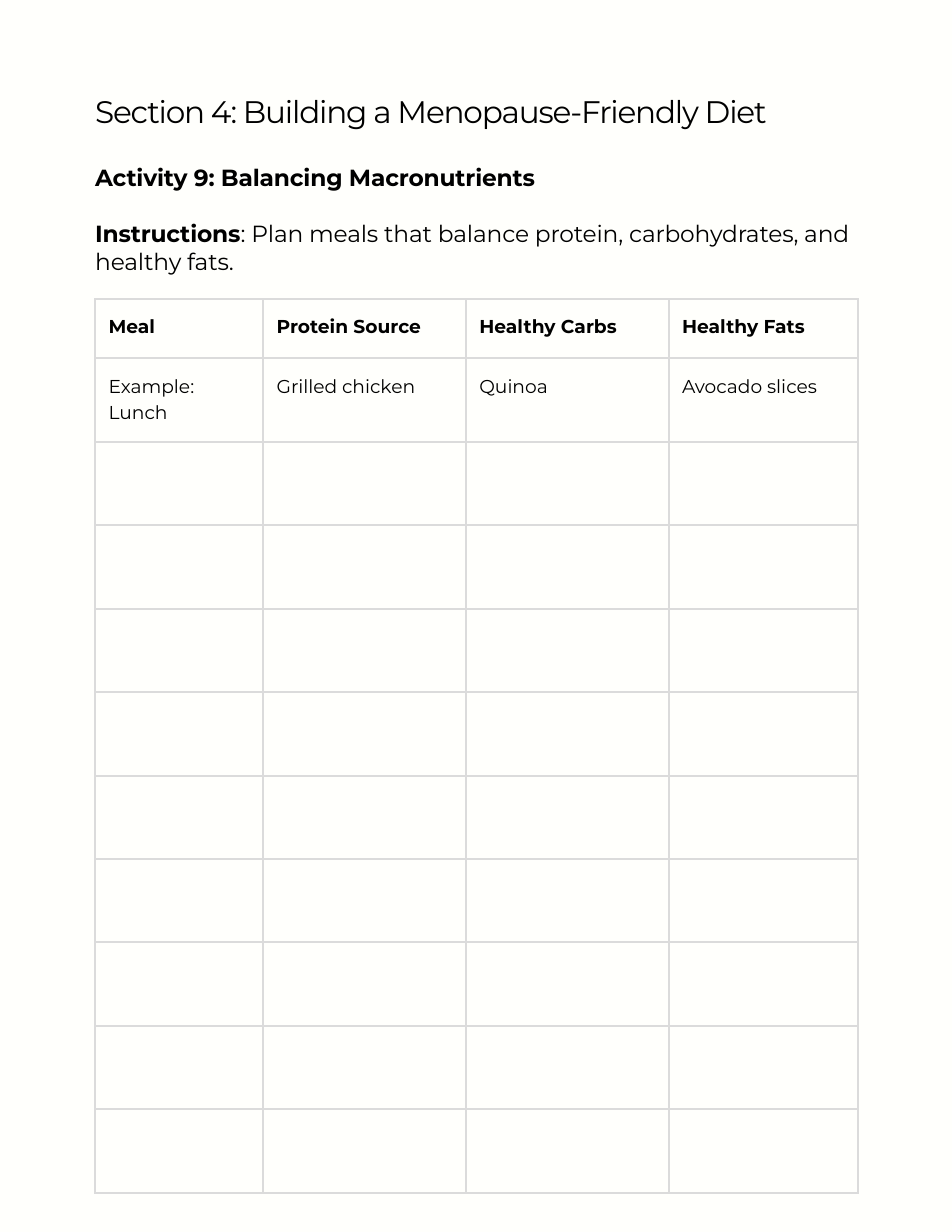
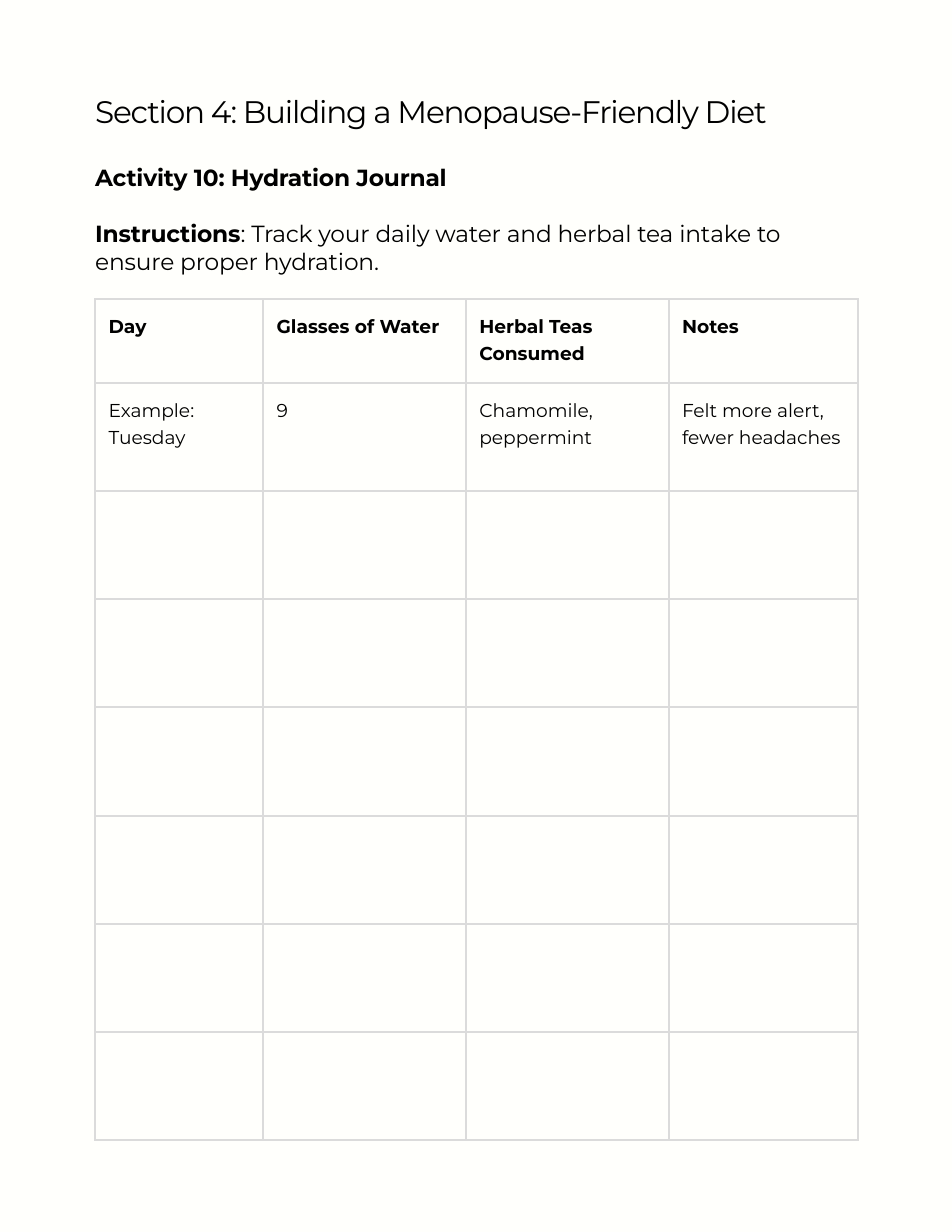
from lxml import etree
from pptx import Presentation
from pptx.dml.color import RGBColor
from pptx.enum.text import MSO_ANCHOR, MSO_AUTO_SIZE, PP_ALIGN
from pptx.oxml.ns import qn
from pptx.util import Inches, Pt

TOP = MSO_ANCHOR.TOP
LEFT = PP_ALIGN.LEFT
FIXED = MSO_AUTO_SIZE.NONE

PAPER = RGBColor(0xFF, 0xFF, 0xFC)
INK = RGBColor(0x00, 0x00, 0x00)
RULE = RGBColor(0xDB, 0xDB, 0xDB)

FONT = "Montserrat"
SECTION = "Section 4: Building a Menopause-Friendly Diet"
MARGIN = Inches(0.85)
CONTENT_WIDTH = Inches(6.8)
TABLE_TOP = Inches(2.67)
COLUMN_WIDTHS = [Inches(width) for width in (1.5, 1.81, 1.81, 1.69)]
CELL_INSET = Inches(0.12)
BORDER = Pt(1.5)


class Workbook:
    def __init__(self):
        self.prs = Presentation()
        self.prs.slide_width = Inches(8.5)
        self.prs.slide_height = Inches(11)
        background = self.prs.slide_master.background.fill
        background.solid()
        background.fore_color.rgb = PAPER
        self.slide = None

    def add_page(self):
        self.slide = self.prs.slides.add_slide(self.prs.slide_layouts[1])

    def add_run(self, paragraph, text, size, bold=False, tracking=0):
        run = paragraph.add_run()
        run.text = text
        run.font.name = FONT
        run.font.size = Pt(size)
        run.font.bold = bold
        run.font.color.rgb = INK
        if tracking:
            run._r.get_or_add_rPr().set("spc", str(round(tracking * 100)))

    def format_paragraph(self, paragraph, leading, before=0):
        properties = paragraph._p.get_or_add_pPr()
        properties.set("marL", "0")
        properties.set("indent", "0")
        etree.SubElement(properties, qn("a:buNone"))
        paragraph.alignment = LEFT
        paragraph.line_spacing = Pt(leading)
        paragraph.space_before = Pt(before)
        paragraph.space_after = Pt(0)

    def place(self, placeholder, top, height):
        placeholder.left, placeholder.top = MARGIN, top
        placeholder.width, placeholder.height = CONTENT_WIDTH, height
        frame = placeholder.text_frame
        frame.margin_left = frame.margin_right = 0
        frame.margin_top = frame.margin_bottom = 0
        frame.vertical_anchor = TOP
        frame.auto_size = FIXED
        frame.word_wrap = True
        return frame

    def add_title(self, text):
        frame = self.place(self.slide.shapes.title, Inches(0.91), Inches(0.27))
        heading = frame.paragraphs[0]
        self.format_paragraph(heading, 18)
        self.add_run(heading, text, 20, tracking=-0.8)

    def add_activity(self, activity, instructions):
        frame = self.place(self.slide.placeholders[1], Inches(1.46), Inches(0.93))
        heading = frame.paragraphs[0]
        self.format_paragraph(heading, 18)
        self.add_run(heading, activity, 15, bold=True, tracking=-0.1)
        guidance = frame.add_paragraph()
        self.format_paragraph(guidance, 18, before=18)
        self.add_run(guidance, "Instructions", 15, bold=True, tracking=-0.1)
        self.add_run(guidance, ": " + instructions, 15, tracking=-0.1)

    def add_border(self, cell):
        properties = cell._tc.get_or_add_tcPr()
        for side in ("a:lnL", "a:lnR", "a:lnT", "a:lnB"):
            line = etree.SubElement(properties, qn(side), w=str(BORDER))
            fill = etree.SubElement(line, qn("a:solidFill"))
            etree.SubElement(fill, qn("a:srgbClr"), val=str(RULE))

    def add_log(self, headings, example, blank_rows, height, header_height):
        entry_rows = blank_rows + 1
        log = self.slide.shapes.add_table(
            entry_rows + 1, len(headings), MARGIN, TABLE_TOP, CONTENT_WIDTH, height
        ).table
        log.first_row = False
        log.horz_banding = False
        for column, width in zip(log.columns, COLUMN_WIDTHS):
            column.width = width
        for index, row in enumerate(log.rows):
            row.height = (height - header_height) // entry_rows if index else header_height
        for cell in log.iter_cells():
            self.add_border(cell)
            cell.fill.background()
            cell.margin_left = cell.margin_right = CELL_INSET
            cell.margin_top = cell.margin_bottom = CELL_INSET
            cell.vertical_anchor = TOP
        for row, texts in enumerate((headings, example)):
            for column, text in enumerate(texts):
                entry = log.cell(row, column).text_frame.paragraphs[0]
                self.format_paragraph(entry, 16.8)
                self.add_run(entry, text, 12, bold=row == 0)


def main():
    workbook = Workbook()

    workbook.add_page()
    workbook.add_title(SECTION)
    workbook.add_activity(
        "Activity 9: Balancing Macronutrients",
        "Plan meals that balance protein, carbohydrates, and healthy fats.",
    )
    workbook.add_log(
        ["Meal", "Protein Source", "Healthy Carbs", "Healthy Fats"],
        ["Example: Lunch", "Grilled chicken", "Quinoa", "Avocado slices"],
        blank_rows=9,
        height=Inches(7.98),
        header_height=Inches(0.53),
    )

    workbook.add_page()
    workbook.add_title(SECTION)
    workbook.add_activity(
        "Activity 10: Hydration Journal",
        "Track your daily water and herbal tea intake to ensure proper hydration.",
    )
    workbook.add_log(
        ["Day", "Glasses of Water", "Herbal Teas Consumed", "Notes"],
        ["Example: Tuesday", "9", "Chamomile, peppermint", "Felt more alert, fewer headaches"],
        blank_rows=6,
        height=Inches(7.51),
        header_height=Inches(0.75),
    )

    workbook.prs.save("out.pptx")


if __name__ == "__main__":
    main()
